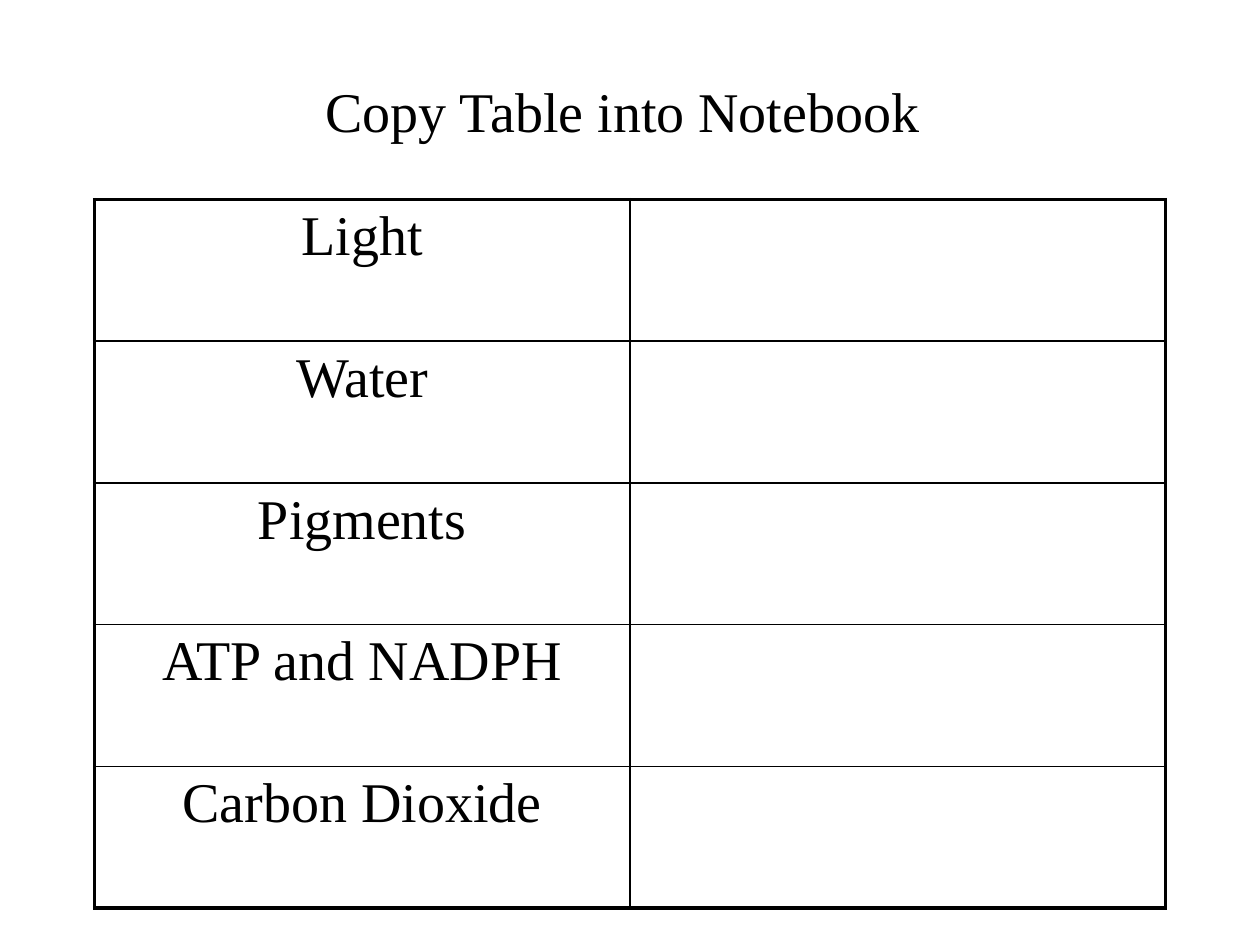
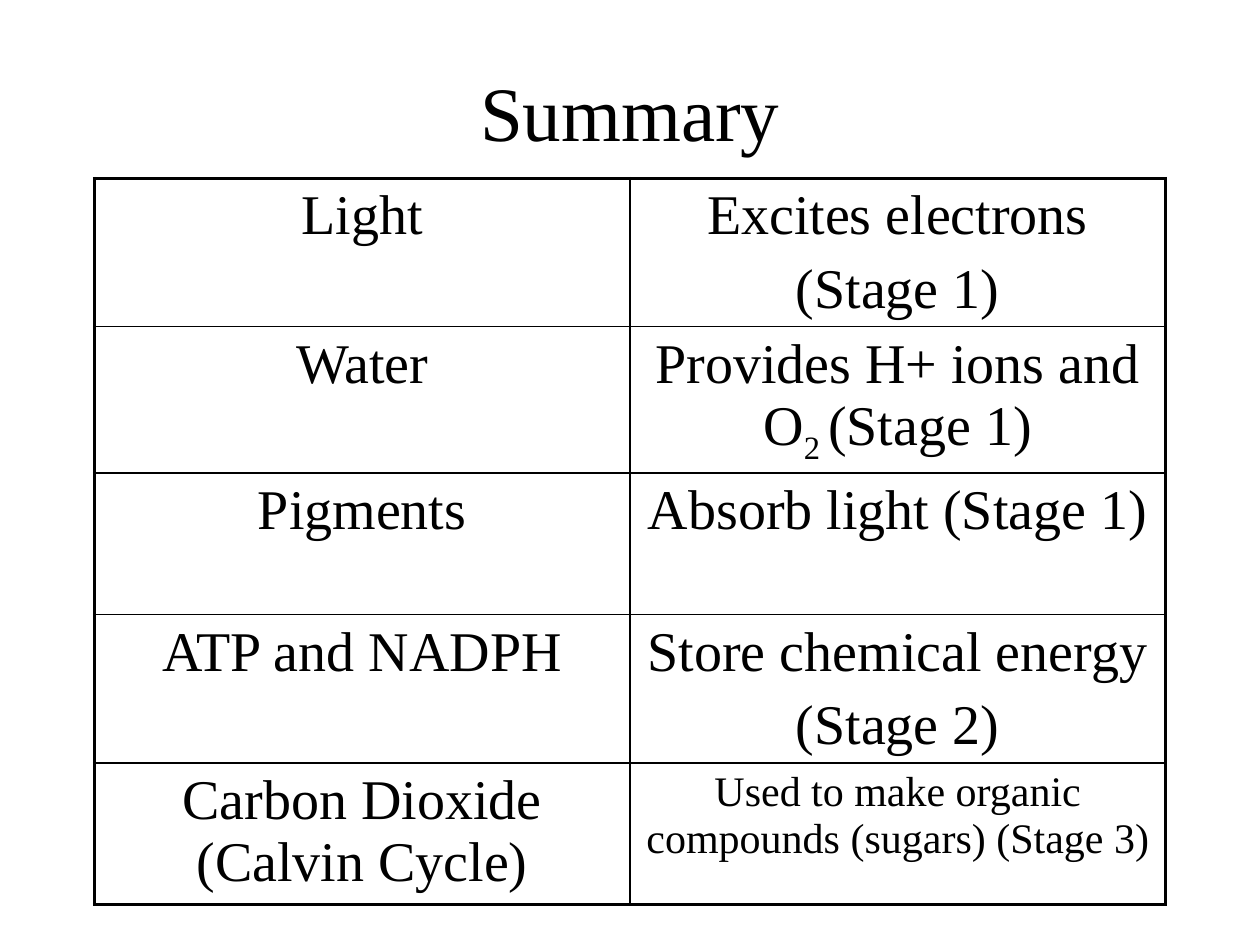
from lxml import etree
from pptx import Presentation
from pptx import util as u
from pptx.dml.color import RGBColor
from pptx.enum import text
from pptx.oxml import ns

FONT = "Times New Roman"
INK = "000000"
BODY_SIZE = 32
OUTER_LINE, INNER_LINE = 2.25, 1
SUBSCRIPT = "2 "
CELL_BOTTOM = u.Inches(-0.03)  # keeps two-line rows tight

deck = Presentation()
deck.slide_width, deck.slide_height = u.Inches(10), u.Inches(7.5)
WIDTH, HEIGHT = deck.slide_width, deck.slide_height
LEFT, TABLE_WIDTH = int(WIDTH * 0.075), int(WIDTH * 0.85)
ROW_HEIGHT = int(HEIGHT * 0.15)


def style_paragraph(para, size):
    para.alignment = text.PP_ALIGN.CENTER
    for span in para.runs:
        span.font.name = FONT
        span.font.size = u.Pt(size)
        span.font.color.rgb = RGBColor.from_string(INK)


def draw_borders(cell, widths):
    """Rule the left, right, top and bottom sides with widths in points."""
    properties = cell._tc.get_or_add_tcPr()
    for index, (side, width) in enumerate(zip("LRTB", widths)):
        line = etree.Element(ns.qn(f"a:ln{side}"), w=str(u.Pt(width)))
        fill = etree.SubElement(line, ns.qn("a:solidFill"))
        etree.SubElement(fill, ns.qn("a:srgbClr"), val=INK)
        properties.insert(index, line)


# A cell is a list of paragraphs, a paragraph a list of runs.
topics = ["Light", "Water", "Pigments", "ATP and NADPH", "Carbon Dioxide"]
roles = [
    [["Excites electrons"], ["(Stage 1)"]],
    [["Provides H+ ions and O", SUBSCRIPT, "(Stage 1)"]],
    [["Absorb light (Stage 1)"]],
    [["Store chemical energy"], ["(Stage 2)"]],
    [["Used to make organic compounds (sugars) (Stage 3)"]],
]
notebook_rows = [([[topic]], []) for topic in topics]
summary_topics = topics[:-1] + ["Carbon Dioxide (Calvin Cycle)"]
summary_rows = [([[topic]], role) for topic, role in zip(summary_topics, roles)]

# title, title size, table top in inches, rows, size of the last role
pages = [
    ("Copy Table into Notebook ", 32, 19 / 12, notebook_rows, BODY_SIZE),
    ("Summary", 44, 17 / 12, summary_rows, 24),
]

for title, title_size, top, rows, last_size in pages:
    page = deck.slides.add_slide(deck.slide_layouts[6])
    box = page.shapes.add_textbox(LEFT, u.Inches(0.25), TABLE_WIDTH, u.Inches(1.25))
    box.text_frame.word_wrap = True
    box.text_frame.vertical_anchor = text.MSO_ANCHOR.MIDDLE
    box.text_frame.text = title
    style_paragraph(box.text_frame.paragraphs[0], title_size)

    table = page.shapes.add_table(len(rows), 2, LEFT, u.Inches(top),
                                  TABLE_WIDTH, ROW_HEIGHT * len(rows)).table
    table.first_row = table.horz_banding = False
    last = len(rows) - 1

    for row, cells in enumerate(rows):
        for column, paragraphs in enumerate(cells):
            cell = table.cell(row, column)
            cell.margin_bottom = CELL_BOTTOM
            cell.fill.background()
            outer_sides = (column == 0, column == 1, row == 0, row == last)
            draw_borders(cell, [OUTER_LINE if outer else INNER_LINE for outer in outer_sides])

            size = last_size if (row, column) == (last, 1) else BODY_SIZE
            for index, spans in enumerate(paragraphs):
                if index == 0:
                    para = cell.text_frame.paragraphs[0]
                else:
                    para = cell.text_frame.add_paragraph()
                    para.space_before = u.Pt(size * 0.2)
                for words in spans:
                    span = para.add_run()
                    span.text = words
                    if words == SUBSCRIPT:
                        span._r.get_or_add_rPr().set("baseline", "-25000")
                style_paragraph(para, size)

deck.save("out.pptx")
